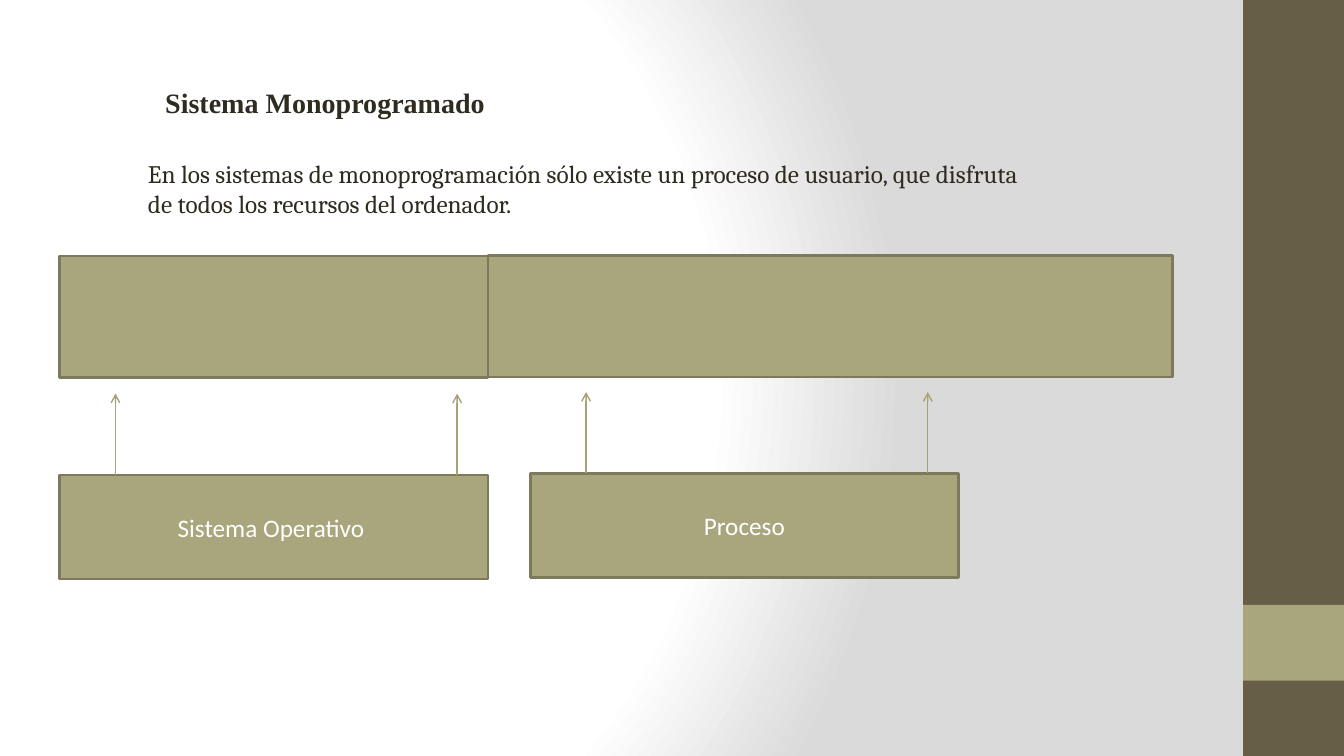
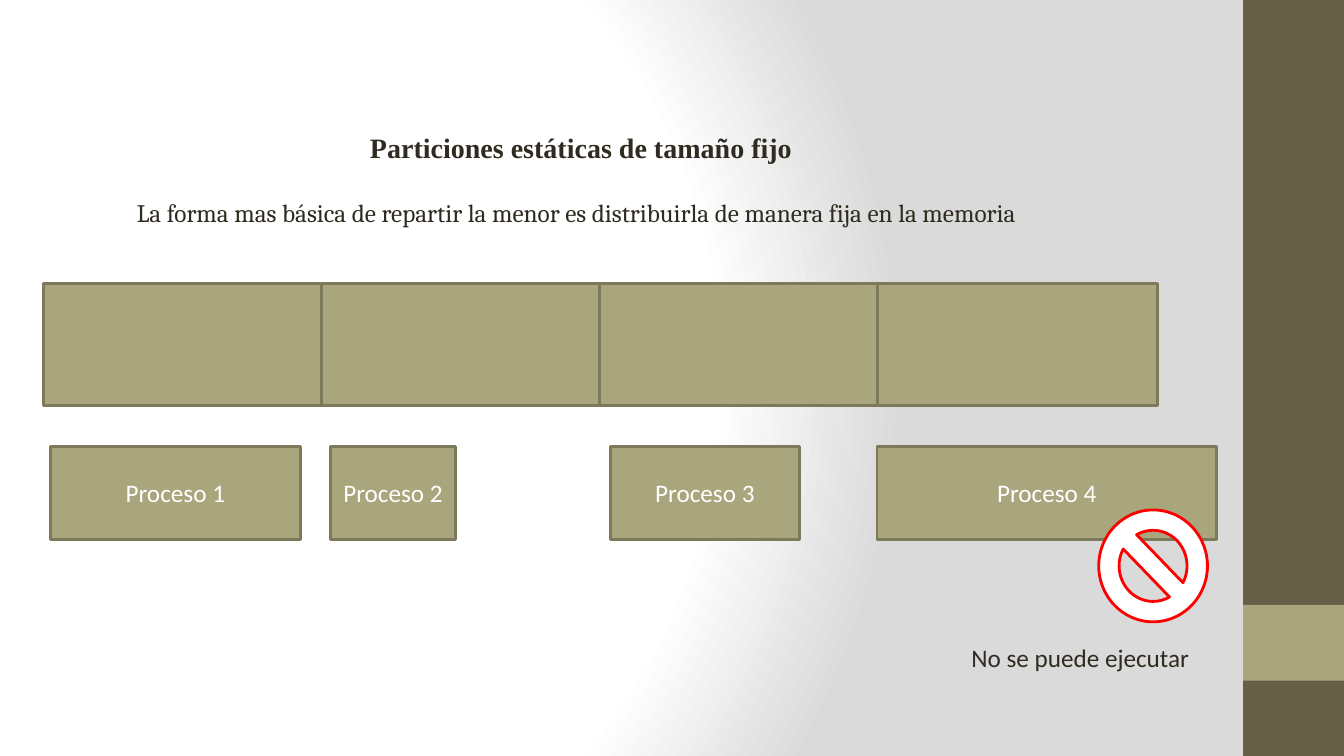
from lxml import etree
from pptx import Presentation
from pptx.dml.color import RGBColor
from pptx.enum.shapes import MSO_CONNECTOR, MSO_SHAPE
from pptx.enum.text import MSO_ANCHOR, MSO_AUTO_SIZE, PP_ALIGN
from pptx.oxml import parse_xml
from pptx.oxml.ns import nsdecls, qn
from pptx.util import Cm, Pt

# Shared look
OLIVE, OLIVE_EDGE, ARROW = "A9A57C", "7D7A5C", "A6A278"
BROWN, INK, WHITE, GREY, RED = "675E47", "2F2B20", "FFFFFF", "DADADA", "FF0000"
TITLE_FONT, BODY_FONT, LABEL_FONT = "Times New Roman", "Cambria", "Calibri"
SLIDE_WIDTH, SLIDE_HEIGHT, BAND_WIDTH = 33.87, 19.05, 2.54
MEMORY_HEIGHT = 3.07


def colour(hex_value):
    return RGBColor.from_string(hex_value)


def place(shape, left, top, width, height):
    shape.left, shape.top = Cm(left), Cm(top)
    shape.width, shape.height = Cm(width), Cm(height)


def write(shape, text, font, size, ink, bold=False, align=PP_ALIGN.LEFT):
    para = shape.text_frame.paragraphs[0]
    para.text = text
    para.alignment = align
    para.font.name, para.font.size, para.font.bold = font, Pt(size), bold
    para.font.color.rgb = colour(ink)


def fit_to_text(shape, wrap):
    frame = shape.text_frame
    frame.word_wrap = wrap
    frame.auto_size = MSO_AUTO_SIZE.SHAPE_TO_FIT_TEXT
    frame.vertical_anchor = MSO_ANCHOR.TOP


def add_figure(page, kind, bounds, fill, edge=None):
    left, top, width, height = map(Cm, bounds)
    shape = page.shapes.add_shape(kind, left, top, width, height)
    shape.shadow.inherit = False
    shape.fill.solid()
    shape.fill.fore_color.rgb = colour(fill)
    if edge:
        shape.line.color.rgb = colour(edge)
        shape.line.width = Pt(2)
    else:
        shape.line.fill.background()
    return shape


def add_block(page, bounds, label=None):
    block = add_figure(page, MSO_SHAPE.RECTANGLE, bounds, OLIVE, OLIVE_EDGE)
    if label:
        block.text_frame.word_wrap = True
        block.text_frame.vertical_anchor = MSO_ANCHOR.MIDDLE
        write(block, label, LABEL_FONT, 18, WHITE, align=PP_ALIGN.CENTER)


def add_arrow(page, x, bottom, top):
    arrow = page.shapes.add_connector(
        MSO_CONNECTOR.STRAIGHT, Cm(x), Cm(bottom), Cm(x), Cm(top))
    arrow.line.color.rgb = colour(ARROW)
    arrow.line.width = Pt(1)
    properties = arrow.element.spPr
    etree.SubElement(properties.find(qn("a:ln")), qn("a:tailEnd"), type="arrow")
    etree.SubElement(properties, qn("a:effectLst"))


def add_text(page, bounds, text, font, wrap=True):
    box = page.shapes.add_textbox(*map(Cm, bounds))
    fit_to_text(box, wrap)
    write(box, text, font, 18, INK)


def add_page(deck, title, bounds):
    page = deck.slides.add_slide(deck.slide_layouts[5])
    heading = page.shapes.title
    place(heading, *bounds)
    fit_to_text(heading, wrap=False)
    write(heading, title, TITLE_FONT, 20, INK, bold=True)
    return page


def style_master(deck, page):
    """Give the master its gradient and side bands, drawn first on a page."""
    master = deck.slide_master
    stops = "".join(
        f'<a:gs pos="{position}"><a:srgbClr val="{value}"/></a:gs>'
        for position, value in ((0, WHITE), (75000, WHITE), (100000, GREY)))
    background = parse_xml(
        f'<p:bg {nsdecls("p", "a")}><p:bgPr><a:gradFill rotWithShape="1">'
        f'<a:gsLst>{stops}</a:gsLst><a:path path="circle">'
        '<a:fillToRect l="20000" t="50000" r="100000" b="50000"/></a:path>'
        '</a:gradFill><a:effectLst/></p:bgPr></p:bg>')
    content = master.element.find(qn("p:cSld"))
    previous = content.find(qn("p:bg"))
    if previous is not None:
        content.remove(previous)
    content.insert(0, background)

    band_left = SLIDE_WIDTH - BAND_WIDTH
    for top, height, fill in ((0, SLIDE_HEIGHT, BROWN), (15.24, 1.91, OLIVE)):
        band = add_figure(page, MSO_SHAPE.RECTANGLE,
                          (band_left, top, BAND_WIDTH, height), fill)
        master.shapes.element.append(band.element)


def build_single_program(deck):
    page = add_page(deck, "Sistema Monoprogramado", (3.91, 2.03, 8.64, 1.12))
    style_master(deck, page)

    # Memory: system area and user area
    add_block(page, (1.5, 6.45, 10.8, MEMORY_HEIGHT))
    add_block(page, (12.3, 6.43, 17.25, MEMORY_HEIGHT))

    # Occupants, each with two arrows up to the memory
    for label, left, top in (("Sistema Operativo ", 1.5, 11.97),
                             ("Proceso", 13.36, 11.93)):
        add_block(page, (left, top, 10.8, 2.62), label)
        for inset in (1.41, 10.02):
            add_arrow(page, left + inset, top, top - 2.05)

    add_text(page, (3.48, 3.86, 22.45, 1.8),
             "En los sistemas de monoprogramación sólo existe un proceso de "
             "usuario, que disfruta de todos los recursos del ordenador.",
             BODY_FONT)


def build_fixed_partitions(deck):
    page = add_page(deck, "Particiones estáticas de tamaño fijo",
                    (9.07, 3.15, 11.4, 1.12))

    # Memory: four equal partitions
    for index in range(4):
        add_block(page, (1.09 + 7.01 * index, 7.14, 7.06, MEMORY_HEIGHT))

    add_text(page, (3.2, 4.85, 23.98, 1.02),
             "La forma mas básica de repartir la menor es distribuirla de "
             "manera fija en la memoria", BODY_FONT, wrap=False)

    # Processes of different sizes
    processes = ((1.27, 6.3), (8.33, 3.15), (15.39, 4.75), (22.1, 8.56))
    for number, (left, width) in enumerate(processes, 1):
        add_block(page, (left, 11.25, width, 2.34), f"Proceso {number}")

    # The last process does not fit
    add_figure(page, MSO_SHAPE.NO_SYMBOL, (27.69, 12.85, 2.74, 2.82), WHITE, RED)
    add_text(page, (24.23, 16.05, 6.32, 1.02), "No se puede ejecutar", LABEL_FONT)


def main():
    deck = Presentation()
    deck.slide_width, deck.slide_height = Cm(SLIDE_WIDTH), Cm(SLIDE_HEIGHT)
    build_single_program(deck)
    build_fixed_partitions(deck)
    deck.save("out.pptx")


if __name__ == "__main__":
    main()
